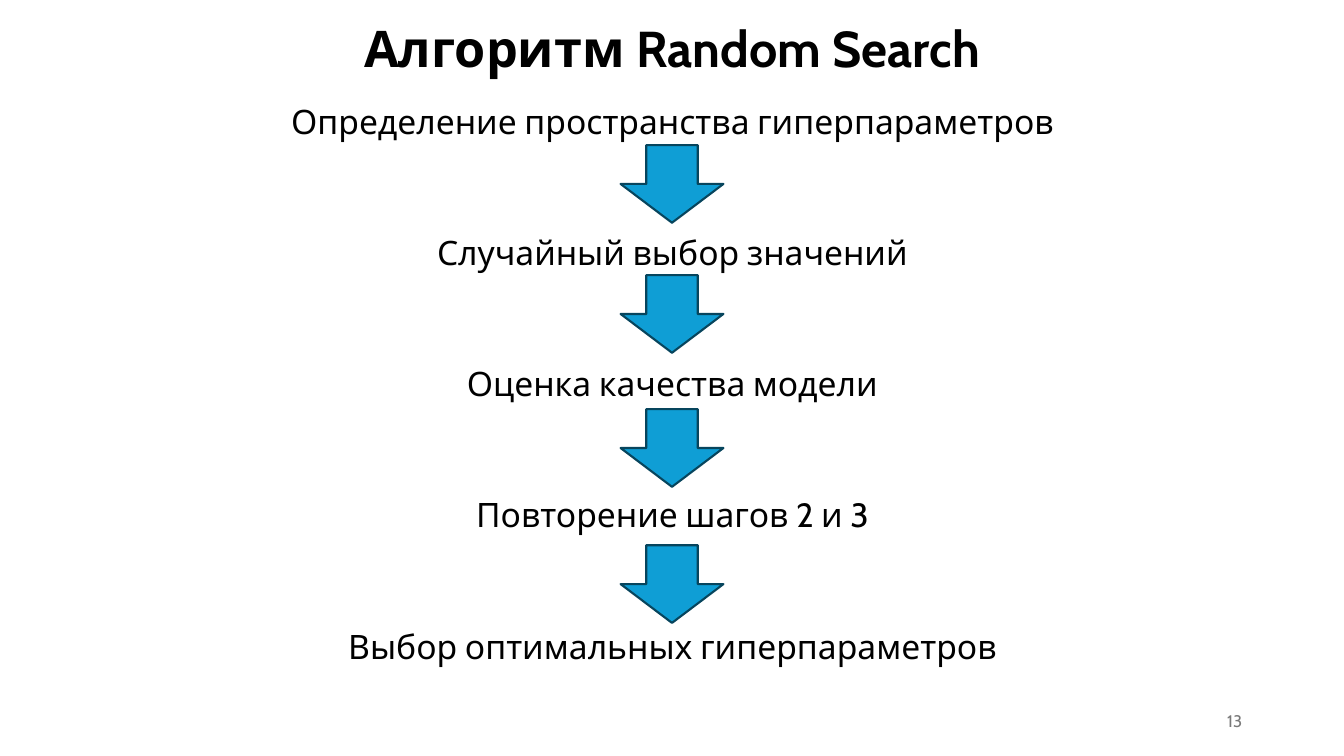
from lxml import etree
from pptx import Presentation
from pptx.dml.color import RGBColor
from pptx.enum.shapes import MSO_SHAPE
from pptx.enum.text import MSO_ANCHOR, MSO_AUTO_SIZE, PP_ALIGN
from pptx.oxml.ns import qn
from pptx.util import Inches, Pt

DOWN_ARROW = MSO_SHAPE.DOWN_ARROW
TOP, MIDDLE = MSO_ANCHOR.TOP, MSO_ANCHOR.MIDDLE
CENTER, RIGHT = PP_ALIGN.CENTER, PP_ALIGN.RIGHT
NO_AUTOFIT = MSO_AUTO_SIZE.NONE

WIDTH, HEIGHT = 13.33, 7.5
STEP_PITCH = 93.6  # points from one step to the next
STEP_LINE = 32
ARROW_WIDTH, ARROW_HEIGHT = 1.02, 0.77
ARROW_TOPS = [1.44, 2.73, 4.06, 5.41]
STEPS = [
    "Определение пространства гиперпараметров",
    "Случайный выбор значений",
    "Оценка качества модели",
    "Повторение шагов 2 и 3",
    "Выбор оптимальных гиперпараметров",
]


def color(value):
    return RGBColor.from_string(value)


def write(shape, lines, box, size, fill="000000", bold=False, align=CENTER,
          anchor=TOP, spacing=1.0, gap=0):
    """Place a text shape and fill it with one paragraph per line."""
    shape.left, shape.top, shape.width, shape.height = map(Inches, box)
    frame = shape.text_frame
    frame.word_wrap = True
    frame.auto_size = NO_AUTOFIT
    frame.vertical_anchor = anchor
    for index, line in enumerate(lines):
        paragraph = frame.add_paragraph() if index else frame.paragraphs[0]
        paragraph.alignment = align
        paragraph.line_spacing = spacing
        paragraph.space_before = Pt(gap if index else 0)
        properties = paragraph._p.get_or_add_pPr()
        properties.set("marL", "0")
        properties.set("indent", "0")
        etree.SubElement(properties, qn("a:buNone"))
        run = paragraph.add_run()
        run.text = line
        run.font.name = "Cabin"
        run.font.size = Pt(size)
        run.font.bold = bold
        run.font.color.rgb = color(fill)


presentation = Presentation()
presentation.slide_width = Inches(WIDTH)
presentation.slide_height = Inches(HEIGHT)
slide = presentation.slides.add_slide(presentation.slide_layouts[1])

# Title
write(slide.shapes.title, ["Алгоритм Random Search"], (3.5, 0.1, 6.33, 0.81),
      size=36, bold=True, anchor=MIDDLE, spacing=0.9)

# Steps of the algorithm
write(slide.placeholders[1], STEPS, (0.92, 0.91, 11.5, 5.85), size=24,
      spacing=Pt(STEP_LINE), gap=STEP_PITCH - STEP_LINE)

# Arrows between the steps
for top in ARROW_TOPS:
    arrow = slide.shapes.add_shape(
        DOWN_ARROW, Inches((WIDTH - ARROW_WIDTH) / 2), Inches(top),
        Inches(ARROW_WIDTH), Inches(ARROW_HEIGHT))
    arrow.shadow.inherit = False
    arrow.fill.solid()
    arrow.fill.fore_color.rgb = color("0F9ED5")
    arrow.line.color.rgb = color("07455D")
    arrow.line.width = Pt(1.5)

# Slide number
write(slide.shapes.add_textbox(0, 0, 0, 0), ["13"], (9.42, 6.95, 3, 0.4),
      size=12, fill="797979", align=RIGHT, anchor=MIDDLE)

presentation.save("out.pptx")
